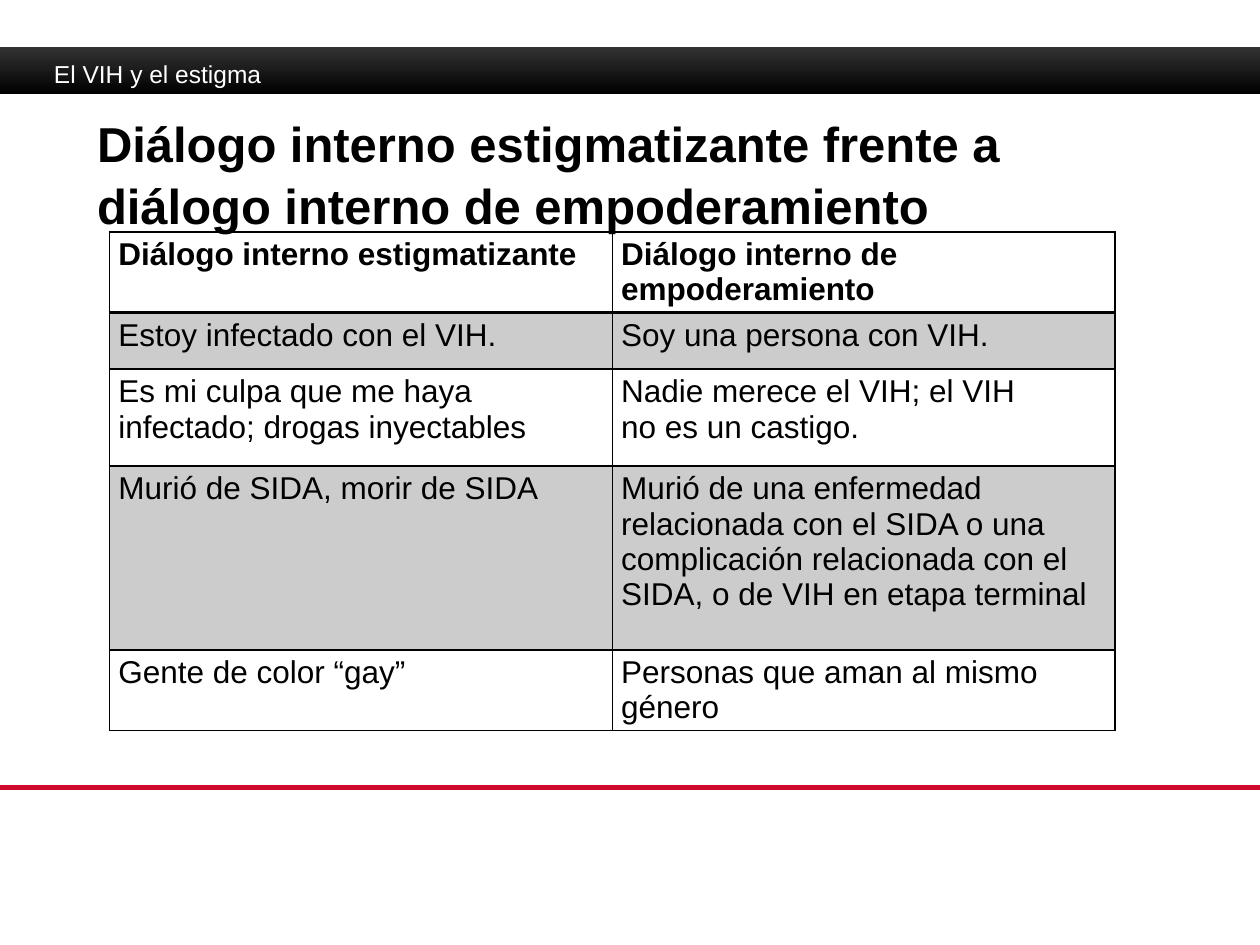
"""Build a slide that contrasts stigmatizing and empowering self-talk about HIV."""
from lxml import etree
from pptx import Presentation
from pptx.dml.color import RGBColor
from pptx.enum import shapes, text
from pptx.oxml import parse_xml
from pptx.oxml.ns import nsdecls, qn
from pptx.util import Inches, Pt

FONT = "Arial"
ROWS = [
    ("Diálogo interno estigmatizante", "Diálogo interno de empoderamiento"),
    ("Estoy infectado con el VIH.", "Soy una persona con VIH."),
    ("Es mi culpa que me haya infectado; drogas inyectables",
     "Nadie merece el VIH; el VIH \vno es un castigo."),
    ("Murió de SIDA, morir de SIDA",
     "Murió de una enfermedad relacionada con el SIDA o una complicación "
     "relacionada con el SIDA, o de VIH en etapa terminal"),
    ("Gente de color “gay”", "Personas que aman al mismo género"),
]
ROW_HEIGHTS = [0.63, 0.45, 0.77, 1.46, 0.63]


def color(value):
    """Return the colour for a hex string."""
    return RGBColor.from_string(value)


def style_paragraph(paragraph, size, value, bold=False):
    """Set the font of a whole paragraph."""
    font = paragraph.font
    font.name, font.size, font.bold = FONT, Pt(size), bold
    font.color.rgb = color(value)
    paragraph.alignment = text.PP_ALIGN.LEFT


def add_bar(slide):
    """Add the dark gradient bar across the top."""
    bar = slide.shapes.add_shape(
        shapes.MSO_SHAPE.RECTANGLE, Inches(0), Inches(0.37), Inches(10), Inches(0.38))
    bar.shadow.inherit = False
    bar.line.fill.background()
    bar.fill.gradient()
    bar.fill.gradient_angle = 270
    for stop, position, value in zip(bar.fill.gradient_stops, (0, 1), ("333333", "000000")):
        stop.position = position
        stop.color.rgb = color(value)


def add_rule(slide):
    """Add the red line above the footer area."""
    rule = slide.shapes.add_connector(
        shapes.MSO_CONNECTOR.STRAIGHT, Inches(0), Inches(6.25), Inches(10), Inches(6.25))
    rule.line.color.rgb = color("CF0A2C")
    rule.line.width = Pt(3)
    etree.SubElement(rule._element.spPr, qn("a:effectLst"))


def set_title(slide, words):
    """Place and format the title placeholder."""
    title = slide.shapes.title
    title.left, title.top = Inches(0.67), Inches(0.83)
    title.width, title.height = Inches(8.67), Inches(0.75)
    frame = title.text_frame
    frame.text = words
    frame.word_wrap = True
    frame.auto_size = text.MSO_AUTO_SIZE.NONE
    frame.vertical_anchor = text.MSO_ANCHOR.TOP
    paragraph = frame.paragraphs[0]
    paragraph.line_spacing = 1.05
    style_paragraph(paragraph, 28, "000000", bold=True)


def add_section_label(slide, words):
    """Add the section name on the bar."""
    box = slide.shapes.add_textbox(Inches(0.33), Inches(0.42), Inches(2.19), Inches(0.34))
    frame = box.text_frame
    frame.word_wrap = True
    frame.text = words
    style_paragraph(frame.paragraphs[0], 14, "FFFFFF")


def set_borders(cell, bottom, top):
    """Give a cell black borders, with its own bottom and top widths."""
    properties = cell._tc.get_or_add_tcPr()
    widths = (("L", 1), ("R", 1), ("T", top), ("B", bottom))
    for index, (side, width) in enumerate(widths):
        properties.insert(index, parse_xml(
            f'<a:ln{side} {nsdecls("a")} w="{Pt(width)}"><a:solidFill>'
            f'<a:srgbClr val="000000"/></a:solidFill></a:ln{side}>'))


def fill_cell(cell, shaded):
    """Shade a cell with translucent black, or leave it clear."""
    if not shaded:
        cell.fill.background()
        return
    cell.fill.solid()
    cell.fill.fore_color.rgb = color("000000")
    black = cell._tc.tcPr.find(".//" + qn("a:srgbClr"))
    etree.SubElement(black, qn("a:alpha"), val="20000")


def add_comparison_table(slide):
    """Add the two-column table of phrases."""
    table = slide.shapes.add_table(
        len(ROWS), 2, Inches(0.87), Inches(1.84), Inches(7.98), Inches(sum(ROW_HEIGHTS))).table
    table.horz_banding = False
    for row, (phrases, height) in enumerate(zip(ROWS, ROW_HEIGHTS)):
        table.rows[row].height = Inches(height)
        for column, phrase in enumerate(phrases):
            cell = table.cell(row, column)
            cell.text = phrase
            cell.margin_left = cell.margin_right = Inches(0.07)
            cell.margin_top = cell.margin_bottom = Inches(0.04)
            style_paragraph(cell.text_frame.paragraphs[0], 18, "000000", bold=row == 0)
            fill_cell(cell, shaded=row % 2 == 1)
            set_borders(cell, bottom=2 if row == 0 else 1, top=2 if row == 1 else 1)


def main():
    """Build and save the slide."""
    presentation = Presentation()
    presentation.slide_width, presentation.slide_height = Inches(10), Inches(7.5)
    slide = presentation.slides.add_slide(presentation.slide_layouts[5])
    add_bar(slide)
    add_rule(slide)
    set_title(slide, "Diálogo interno estigmatizante frente a diálogo interno de empoderamiento")
    add_comparison_table(slide)
    add_section_label(slide, "El VIH y el estigma")
    presentation.save("out.pptx")


if __name__ == "__main__":
    main()
